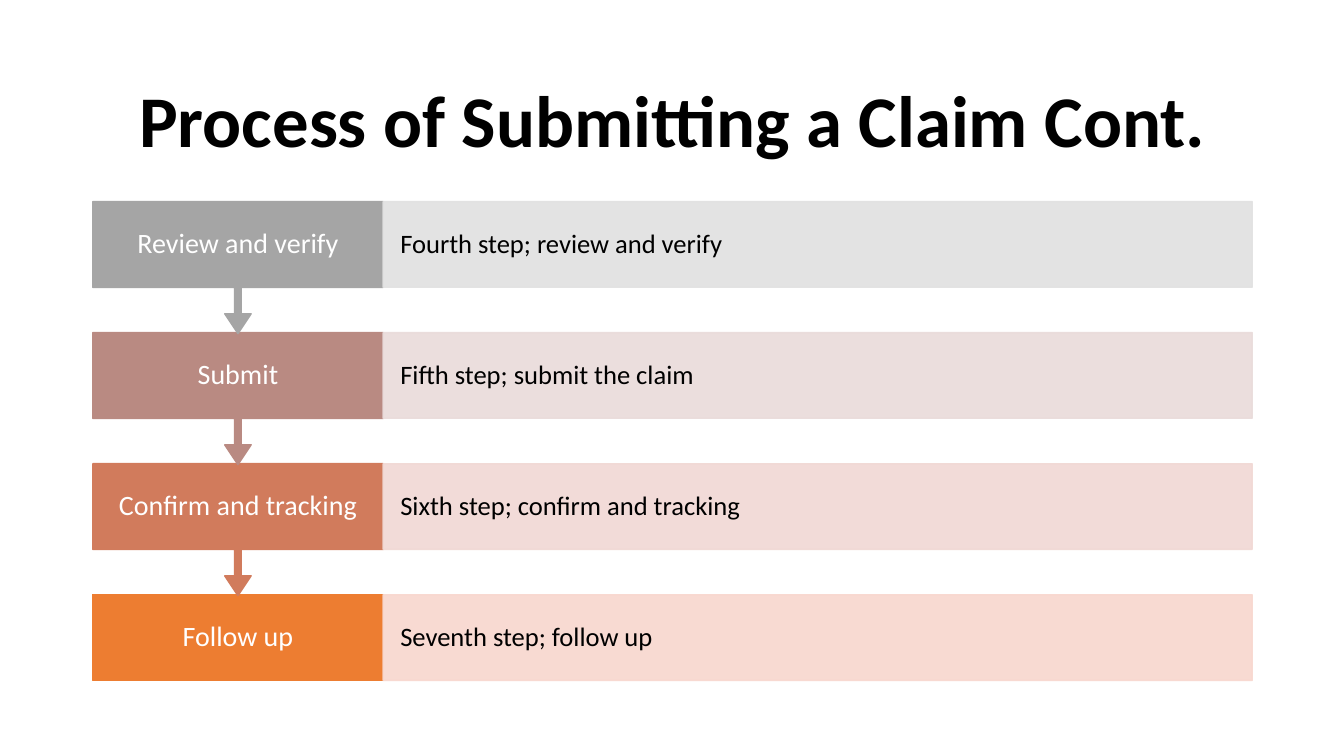
from lxml.etree import SubElement
from pptx import Presentation
from pptx.dml.color import RGBColor
from pptx.enum.shapes import MSO_SHAPE
from pptx.enum.text import MSO_ANCHOR, PP_ALIGN
from pptx.oxml.ns import qn
from pptx.util import Inches, Pt

BLACK = RGBColor(0x00, 0x00, 0x00)
WHITE = RGBColor(0xFF, 0xFF, 0xFF)
GRAY = RGBColor(0xA5, 0xA5, 0xA5)
ROSE = RGBColor(0xB9, 0x8A, 0x82)
TERRACOTTA = RGBColor(0xD1, 0x7B, 0x5C)
ORANGE = RGBColor(0xED, 0x7D, 0x31)
PALE_GRAY = RGBColor(0xE1, 0xE1, 0xE1)
PALE_ROSE = RGBColor(0xE9, 0xDB, 0xDA)
PALE_TERRACOTTA = RGBColor(0xF1, 0xD8, 0xD4)
PALE_ORANGE = RGBColor(0xF8, 0xD7, 0xCE)

STEPS = [
    ("Review and verify", "Fourth step; review and verify", GRAY, PALE_GRAY),
    ("Submit", "Fifth step; submit the claim", ROSE, PALE_ROSE),
    ("Confirm and tracking", "Sixth step; confirm and tracking", TERRACOTTA, PALE_TERRACOTTA),
    ("Follow up", "Seventh step; follow up", ORANGE, PALE_ORANGE),
]
STEP_PITCH = 1.3
STEP_HEIGHT = 0.85
CALLOUT_HEIGHT = 1.31
LABEL_WIDTH = 2.88


def write_text(shape, text, size, color, alignment, margins, bold=False):
    """Write one vertically centred line of text inside a shape."""
    frame = shape.text_frame
    frame.word_wrap = True
    frame.vertical_anchor = MSO_ANCHOR.MIDDLE
    horizontal, vertical = margins
    frame.margin_left = frame.margin_right = Inches(horizontal)
    frame.margin_top = frame.margin_bottom = Inches(vertical)
    paragraph = frame.paragraphs[0]
    paragraph.alignment = alignment
    paragraph.line_spacing = 0.9
    run = paragraph.add_run()
    run.text = text
    run.font.name = "Calibri"
    run.font.size = Pt(size)
    run.font.bold = bold
    run.font.color.rgb = color


def add_block(slide, kind, left, top, width, height, color):
    """Add a filled shape with a matching outline."""
    shape = slide.shapes.add_shape(
        kind, Inches(left), Inches(top), Inches(width), Inches(height)
    )
    shape.shadow.inherit = False
    shape.fill.solid()
    shape.fill.fore_color.rgb = color
    shape.line.color.rgb = color
    shape.line.width = Pt(1)
    return shape


def set_opacity(shape, percent):
    """Set the opacity of the fill and outline of a shape."""
    properties = shape.element.spPr
    for solid_fill in properties.iter(qn("a:solidFill")):
        SubElement(solid_fill[0], qn("a:alpha"), val=str(percent * 1000))


def add_title(slide, left, top, width, height):
    """Add the slide title."""
    title = slide.shapes.add_textbox(
        Inches(left), Inches(top), Inches(width), Inches(height)
    )
    write_text(
        title, "Process of Submitting a Claim Cont.", 52, BLACK,
        PP_ALIGN.CENTER, (0.1, 0.05), bold=True,
    )


def add_step(slide, left, top, width, step, is_last):
    """Add one step: a label, pointing to the next step if any, and its description."""
    label, description, color, pale_color = step
    if is_last:
        label_shape = add_block(
            slide, MSO_SHAPE.RECTANGLE, left, top, LABEL_WIDTH, STEP_HEIGHT, color
        )
    else:
        label_shape = add_block(
            slide, MSO_SHAPE.DOWN_ARROW_CALLOUT, left, top, LABEL_WIDTH, CALLOUT_HEIGHT, color
        )
        for index, value in enumerate((0.05, 0.1, 0.15, 0.65)):
            label_shape.adjustments[index] = value
    write_text(label_shape, label, 20, WHITE, PP_ALIGN.CENTER, (0.2, 0.16))

    description_shape = add_block(
        slide, MSO_SHAPE.RECTANGLE, left + LABEL_WIDTH, top,
        width - LABEL_WIDTH, STEP_HEIGHT, pale_color,
    )
    set_opacity(description_shape, 90)
    write_text(description_shape, description, 19, BLACK, PP_ALIGN.LEFT, (0.17, 0.26))


def add_process(slide, left, top, width):
    """Stack the steps from the bottom up so each arrow tip lies over the next step."""
    last = len(STEPS) - 1
    for index in range(last, -1, -1):
        add_step(slide, left, top + index * STEP_PITCH, width, STEPS[index], index == last)


def main():
    """Build and save the claim process slide."""
    presentation = Presentation()
    presentation.slide_width = Inches(13.33)
    presentation.slide_height = Inches(7.5)
    slide = presentation.slides.add_slide(presentation.slide_layouts[6])
    add_title(slide, 0.92, 0.61, 11.5, 1.24)
    add_process(slide, 0.92, 2, 11.5)
    presentation.save("out.pptx")


if __name__ == "__main__":
    main()
